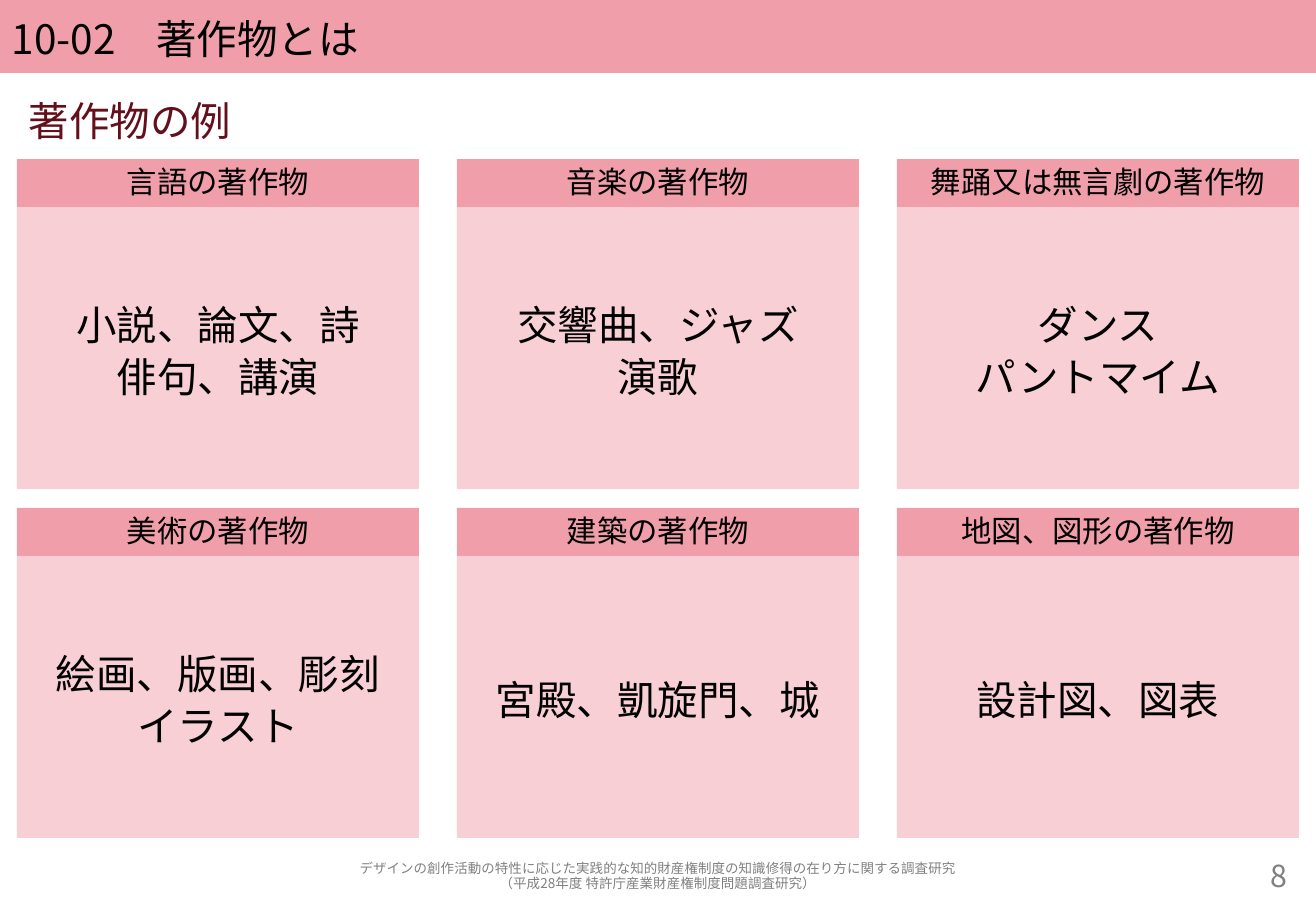
from lxml.etree import SubElement
from pptx import Presentation
from pptx.dml.color import RGBColor
from pptx.enum.shapes import MSO_SHAPE
from pptx.enum.text import MSO_ANCHOR, PP_ALIGN
from pptx.oxml.ns import qn
from pptx.util import Pt

PX = 7526
COLORS = {"band": "F09FAA", "panel": "F8CFD5", "text": "000000",
          "heading": "64101C", "muted": "808080"}
EXAMPLES = [
    ("言語の著作物", "小説、論文、詩\n俳句、講演"),
    ("音楽の著作物", "交響曲、ジャズ\n演歌"),
    ("舞踊又は無言劇の著作物", "ダンス\nパントマイム"),
    ("美術の著作物", "絵画、版画、彫刻\nイラスト"),
    ("建築の著作物", "宮殿、凱旋門、城"),
    ("地図、図形の著作物", "設計図、図表"),
]
FOOTER = ("デザインの創作活動の特性に応じた実践的な知的財産権制度の知識修得の在り方に関する調査研究\n"
          "（平成28年度 特許庁産業財産権制度問題調査研究）")


class SlideBuilder:
    """Draws styled boxes and text on one slide, measured in px."""

    def __init__(self, slide, font="Noto Sans CJK JP", line_spacing=0.92):
        self.slide = slide
        self.font = font
        self.line_spacing = line_spacing

    def box(self, x, y, w, h, fill, text, **style):
        sp = self.slide.shapes.add_shape(
            MSO_SHAPE.RECTANGLE, x * PX, y * PX, w * PX, h * PX)
        sp.shadow.inherit = False
        sp.fill.solid()
        sp.fill.fore_color.rgb = RGBColor.from_string(COLORS[fill])
        sp.line.fill.background()
        self.set_text(sp.text_frame, text, **style)

    def label(self, x, y, w, h, text, **style):
        sp = self.slide.shapes.add_textbox(x * PX, y * PX, w * PX, h * PX)
        self.set_text(sp.text_frame, text, **style)

    def set_text(self, tf, text, size=24, color="text", align=PP_ALIGN.CENTER,
                 anchor=MSO_ANCHOR.MIDDLE, top=0, bottom=0, gap=0):
        tf.word_wrap = True
        tf.vertical_anchor = anchor
        tf.margin_left = tf.margin_right = 12 * PX
        tf.margin_top, tf.margin_bottom = top * PX, bottom * PX
        tf.text = text
        for i, p in enumerate(tf.paragraphs):
            p.alignment = align
            p.line_spacing = self.line_spacing
            p.space_before = Pt(gap if i else 0)
            for r in p.runs:
                r.font.size = Pt(size)
                r.font.color.rgb = RGBColor.from_string(COLORS[color])
                r.font.name = self.font
                SubElement(r._r.get_or_add_rPr(), qn("a:ea"), typeface=self.font)

    def card(self, x, y, title, examples):
        self.box(x, y + 48, 402, 282, "panel", examples, top=10, gap=4.8)
        self.box(x, y, 402, 48, "band", title, size=18,
                 anchor=MSO_ANCHOR.TOP, top=8)


def main():
    prs = Presentation()
    prs.slide_width, prs.slide_height = 1316 * PX, 911 * PX
    s = SlideBuilder(prs.slides.add_slide(prs.slide_layouts[6]))
    s.box(0, 0, 1316, 73, "band", "10-02　著作物とは", align=PP_ALIGN.LEFT, top=9)
    s.label(17, 92, 1282, 57, "著作物の例", color="heading",
            align=PP_ALIGN.LEFT, anchor=MSO_ANCHOR.TOP, top=9)
    for i, (title, examples) in enumerate(EXAMPLES):
        row, col = divmod(i, 3)
        s.card(17 + col * 440, 159 + row * 349, title, examples)
    s.label(17, 858, 1282, 38, FOOTER, size=8, color="muted")
    s.label(1136, 858, 163, 38, "8", size=18, color="muted",
            align=PP_ALIGN.RIGHT)
    prs.save("out.pptx")


if __name__ == "__main__":
    main()
